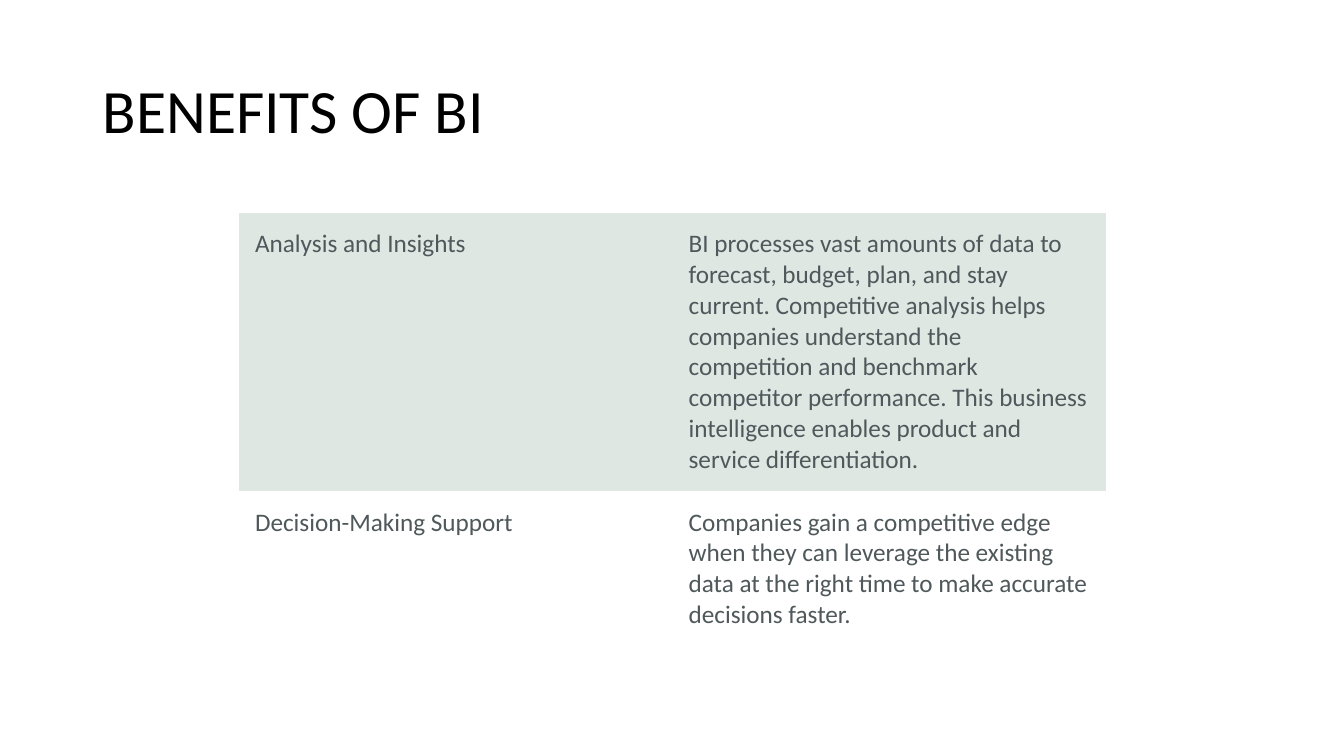
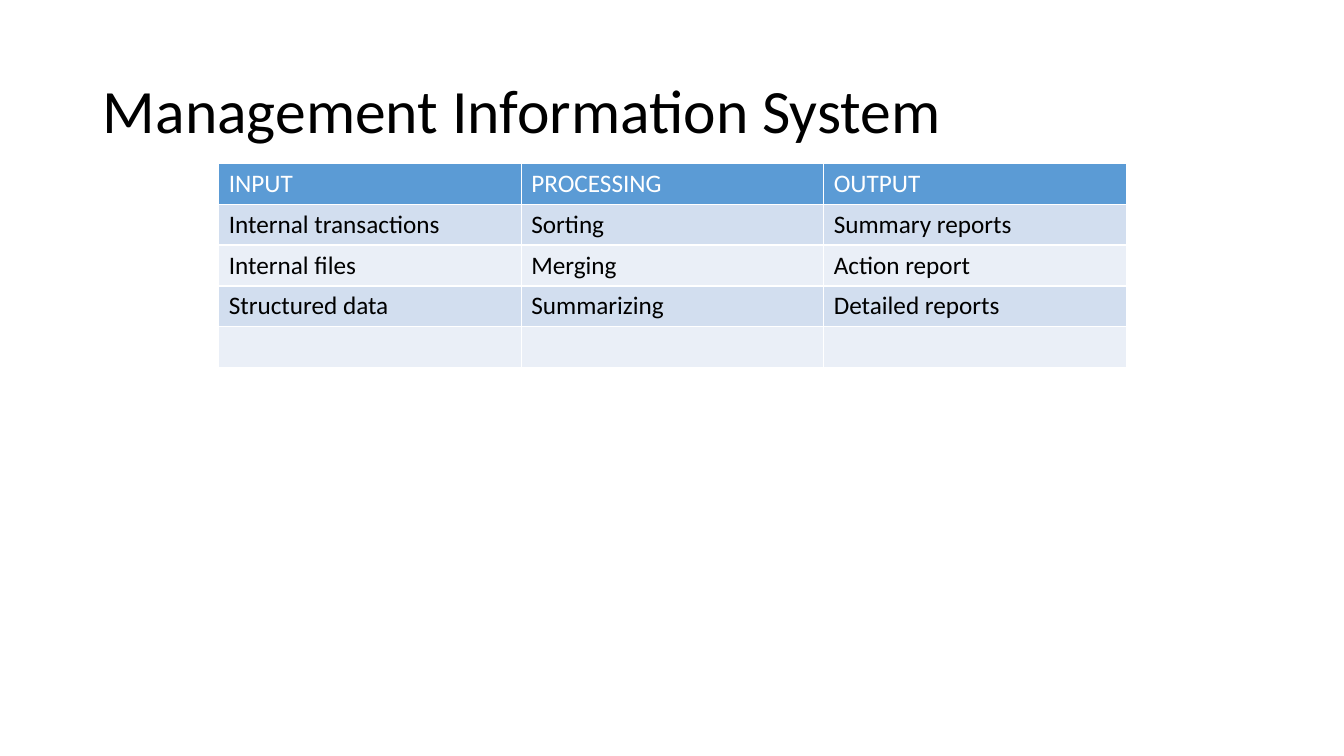
from lxml import etree
from pptx import Presentation
from pptx.dml.color import RGBColor
from pptx.enum.text import MSO_ANCHOR, PP_ALIGN
from pptx.oxml.ns import qn
from pptx.util import Inches, Pt

LEFT = PP_ALIGN.LEFT
MIDDLE = MSO_ANCHOR.MIDDLE
FONT = "Calibri"
BLACK, WHITE = "000000", "FFFFFF"
SLATE, SAGE = "4F585B", "DFE7E3"
BLUE, BAND_DARK, BAND_LIGHT = "5B9BD5", "D2DEEF", "EAEFF7"
PLAIN_TABLE = "{2D5ABB26-0587-4C30-8999-92F81FD0307C}"

SLIDES = [
    {
        "title": "BENEFITS OF BI",
        "at": (2.37, 2.11),
        "col_width": 4.3,
        "row_heights": [2.75, 1.47],
        "inset": (0.16, 0.16),
        "border": None,
        "fills": [SAGE, WHITE],
        "colors": [SLATE, SLATE],
        "rows": [
            ["Analysis and Insights",
             "BI processes vast amounts of data to forecast, budget, plan, and stay current. "
             "Competitive analysis helps companies understand the competition and benchmark "
             "competitor performance. This business intelligence enables product and service "
             "differentiation."],
            ["Decision-Making Support",
             "Companies gain a competitive edge when they can leverage the existing data at "
             "the right time to make accurate decisions faster."],
        ],
    },
    {
        "title": "Management Information System",
        "at": (2.17, 1.62),
        "col_width": 3,
        "row_heights": [0.405] * 5,
        "inset": (0.1, 0.05),
        "border": WHITE,
        "fills": [BLUE] + [BAND_DARK, BAND_LIGHT] * 2,
        "colors": [WHITE] + [BLACK] * 4,
        "rows": [
            ["INPUT", "PROCESSING", "OUTPUT"],
            ["Internal transactions", "Sorting", "Summary reports"],
            ["Internal files", "Merging", "Action report"],
            ["Structured data", "Summarizing", "Detailed reports"],
            ["", "", ""],
        ],
    },
]


def add_run(p, text, size, color):
    r = p.add_run()
    r.text = text
    r.font.name = FONT
    r.font.size = Pt(size)
    r.font.color.rgb = RGBColor.from_string(color)


def add_borders(cell, color):
    tc_pr = cell._tc.get_or_add_tcPr()
    for side in ("lnL", "lnR", "lnT", "lnB"):
        ln = etree.SubElement(tc_pr, qn(f"a:{side}"), w=str(Pt(1)))
        fill = etree.SubElement(ln, qn("a:solidFill"))
        etree.SubElement(fill, qn("a:srgbClr"), val=color)


prs = Presentation()
prs.slide_width = Inches(13.33)
prs.slide_height = Inches(7.5)
layout = prs.slide_layouts[5]

for spec_data in SLIDES:
    s = prs.slides.add_slide(layout)

    title = s.shapes.title
    title.left, title.top = Inches(0.92), Inches(0.4)
    title.width, title.height = Inches(11.5), Inches(1.45)
    tf = title.text_frame
    tf.vertical_anchor = MIDDLE
    p = tf.paragraphs[0]
    p.alignment = LEFT
    p.line_spacing = 0.9
    add_run(p, spec_data["title"], 44, BLACK)

    rows = spec_data["rows"]
    n_cols = len(rows[0])
    x, y = spec_data["at"]
    width = spec_data["col_width"] * n_cols
    height = sum(spec_data["row_heights"])
    sp = s.shapes.add_table(len(rows), n_cols, Inches(x), Inches(y), Inches(width), Inches(height))
    table = sp.table
    table.first_row = False
    table.horz_banding = False
    table._tbl.tblPr.find(qn("a:tableStyleId")).text = PLAIN_TABLE
    for col in table.columns:
        col.width = Inches(spec_data["col_width"])

    inset_x, inset_y = spec_data["inset"]
    for i, texts in enumerate(rows):
        table.rows[i].height = Inches(spec_data["row_heights"][i])
        for j, text in enumerate(texts):
            cell = table.cell(i, j)
            cell.margin_left = cell.margin_right = Inches(inset_x)
            cell.margin_top = cell.margin_bottom = Inches(inset_y)
            if spec_data["border"]:
                add_borders(cell, spec_data["border"])
            cell.fill.solid()
            cell.fill.fore_color.rgb = RGBColor.from_string(spec_data["fills"][i])
            if text:
                add_run(cell.text_frame.paragraphs[0], text, 18, spec_data["colors"][i])

prs.save("out.pptx")
